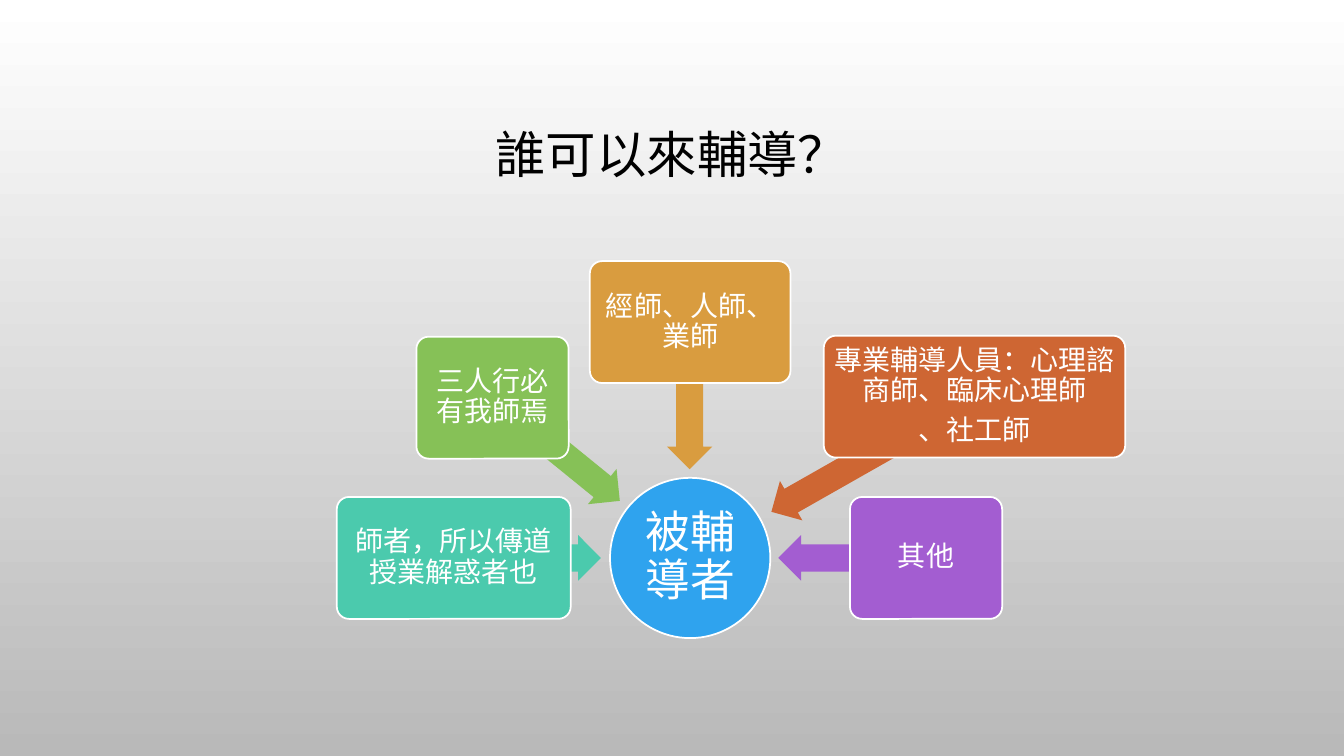
from dataclasses import dataclass

from pptx import Presentation
from pptx import util as u
from pptx.dml.color import RGBColor
from pptx.enum import shapes, text

KIND = shapes.MSO_SHAPE


@dataclass(frozen=True)
class Theme:
    face: str = "Calibri"
    ink: str = "000000"
    white: str = "FFFFFF"
    shade: str = "B9B9B9"
    hub: str = "2FA3EE"
    teal: str = "4BCAAD"
    green: str = "86C157"
    gold: str = "D99C3F"
    rust: str = "CE6633"
    violet: str = "A35DD1"
    head: int = 36
    core: int = 32
    body: int = 20
    edge: float = 1.25


class Board:
    def __init__(self, slide, theme):
        self.slide = slide
        self.theme = theme

    def back(self):
        fill = self.slide.background.fill
        fill.gradient()
        fill.gradient_angle = 270
        tones = (self.theme.white, self.theme.shade)
        for stop, tone, spot in zip(fill.gradient_stops, tones, (0, 1)):
            stop.color.rgb = RGBColor.from_string(tone)
            stop.position = spot

    def label(self, shape, lines, size, color, inset):
        frame = shape.text_frame
        pad = u.Inches(inset)
        style = {
            "word_wrap": True,
            "vertical_anchor": text.MSO_ANCHOR.MIDDLE,
            "margin_left": pad,
            "margin_right": pad,
            "margin_top": pad,
            "margin_bottom": pad,
        }
        for key, value in style.items():
            setattr(frame, key, value)
        frame.text = "\n".join(lines)
        for para in frame.paragraphs:
            para.alignment = text.PP_ALIGN.CENTER
            para.line_spacing = 0.9
            for key, value in {"name": self.theme.face, "size": u.Pt(size)}.items():
                setattr(para.font, key, value)
            para.font.color.rgb = RGBColor.from_string(color)
        for para in frame.paragraphs[:-1]:
            para.space_after = u.Pt(size * 0.35)

    def title(self, words, place):
        box = self.slide.shapes.add_textbox(*map(u.Inches, place))
        self.label(box, [words], self.theme.head, self.theme.ink, 0.1)

    def shape(self, kind, place, color):
        item = self.slide.shapes.add_shape(kind, *map(u.Inches, place))
        item.shadow.inherit = False
        item.fill.solid()
        item.fill.fore_color.rgb = RGBColor.from_string(color)
        item.line.fill.background()
        return item

    def node(self, kind, place, color, lines, size, inset):
        """Add a white-edged shape with centred white text."""
        item = self.shape(kind, place, color)
        item.line.color.rgb = RGBColor.from_string(self.theme.white)
        item.line.width = u.Pt(self.theme.edge)
        self.label(item, lines, size, self.theme.white, inset)
        return item

    def card(self, place, color, lines):
        item = self.node(KIND.ROUNDED_RECTANGLE, place, color, lines,
                         self.theme.body, 0.04)
        item.adjustments[0] = 0.1

    def arrow(self, place, turn, color):
        item = self.shape(KIND.LEFT_ARROW, place, color)
        item.rotation = turn
        item.adjustments[0] = 0.6
        item.adjustments[1] = 0.5


def main():
    deck = Presentation()
    deck.slide_width = u.Inches(13.33)
    deck.slide_height = u.Inches(7.5)
    look = Theme()
    board = Board(deck.slides.add_slide(deck.slide_layouts[6]), look)
    board.back()
    board.title("誰可以來輔導？", (1, 0.68, 11.33, 1.75))
    board.node(KIND.OVAL, (6.05, 4.74, 1.59, 1.59), look.hub,
               ["被輔導者"], look.core, 0.02)

    tall, thick = 1.21, 0.45
    # Each helper: colour, card left/top/width, arrow left/top/length, turn, text
    helpers = [
        (look.teal, (3.34, 4.93, 2.32), (4.5, 5.31, 1.46), 180,
         ["師者，所以傳道授業解惑者也"]),
        (look.green, (4.13, 3.34, 1.51), (4.7, 4.23, 1.63), 219.1,
         ["三人行必有我師焉"]),
        (look.gold, (5.85, 2.59, 1.99), (6.11, 3.7, 1.46), 270,
         ["經師、人師、業師"]),
        (look.rust, (8.17, 3.33, 2.99), (7.5, 4.28, 2.32), 330.4,
         ["專業輔導人員：心理諮商師、臨床心理師", "、社工師"]),
        (look.violet, (8.43, 4.93, 1.51), (7.72, 5.31, 1.46), 0,
         ["其他"]),
    ]
    for color, card, arrow, turn, lines in helpers:
        board.arrow((*arrow, thick), turn, color)
        board.card((*card, tall), color, lines)

    deck.save("out.pptx")


if __name__ == "__main__":
    main()
